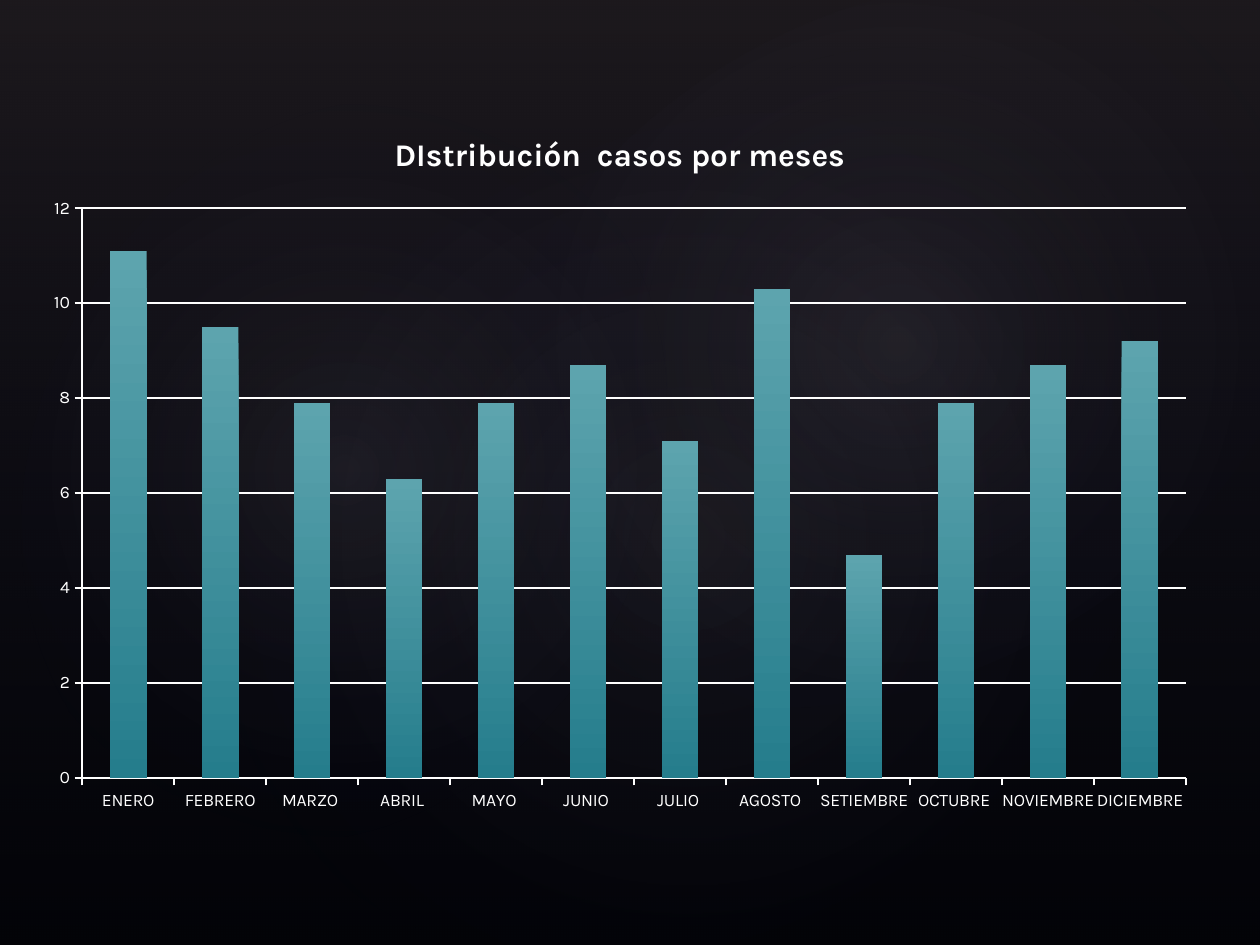
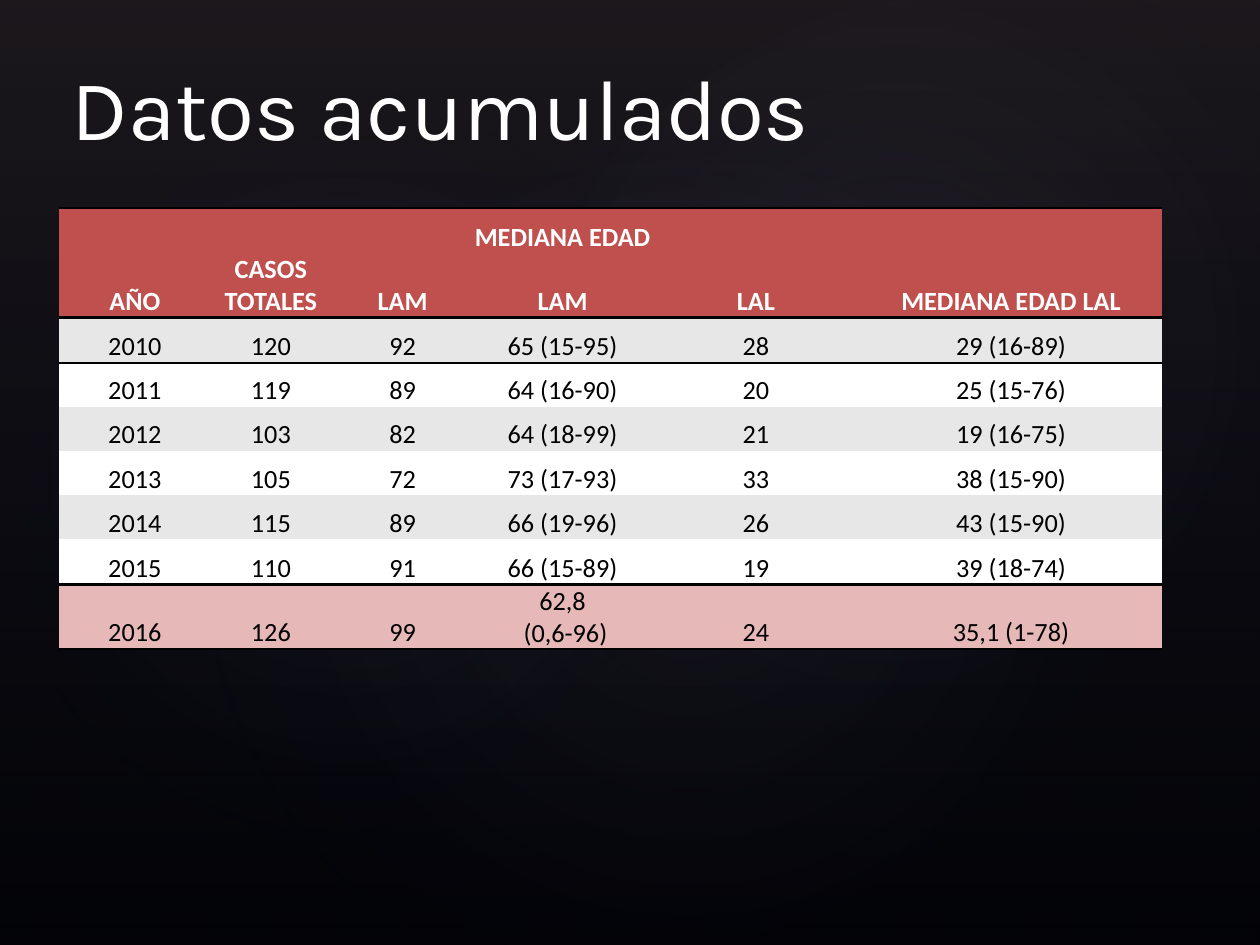
"""Build two dark slides: a column chart of cases by month and a table of yearly data."""
from lxml import etree
from pptx import Presentation
from pptx import util as u
from pptx.chart.data import CategoryChartData
from pptx.dml.color import RGBColor
from pptx.enum import chart as ch, shapes, text
from pptx.oxml import ns

COLORS = {"black": "000000", "white": "FFFFFF", "mauve": "504652", "navy": "242852",
          "glow": "C4BCC6", "bar_top": "5DA4AE", "bar_bottom": "257D8C",
          "header": "C0504D", "band": "E7E7E7", "last": "E6B8B7"}
RGB = {name: RGBColor.from_string(code) for name, code in COLORS.items()}
FONT = "Karla"

prs = Presentation()
prs.slide_width, prs.slide_height = u.Inches(10), u.Inches(7.5)


def box(left, top, width, height):
    """Turn percentages of the slide into lengths."""
    w, h = prs.slide_width / 100, prs.slide_height / 100
    return [round(v) for v in (left * w, top * h, width * w, height * h)]


def gradient(fill, parent, stops, circle=False):
    """Fill with stops of (position, colour, opacity), downwards or from the centre."""
    fill.background()
    gs = "".join(f'<a:gs pos="{pos * 1000}"><a:srgbClr val="{COLORS[name]}">'
                 f'<a:alpha val="{alpha * 1000}"/></a:srgbClr></a:gs>' for pos, name, alpha in stops)
    way = ('<a:path path="circle"><a:fillToRect l="50000" t="50000" r="50000" b="50000"/></a:path>'
           if circle else '<a:lin ang="5400000" scaled="0"/>')
    xml = (f'<a:gradFill {ns.nsdecls("a")} rotWithShape="1"><a:gsLst>{gs}</a:gsLst>{way}</a:gradFill>')
    parent.replace(parent.find(ns.qn("a:noFill")), etree.fromstring(xml))


RECT, OVAL = shapes.MSO_SHAPE.RECTANGLE, shapes.MSO_SHAPE.OVAL
veil = [(0, "mauve", 36), (100, "navy", 10)]
backdrop = [(RECT, (0, 0, 100, 100), 0, veil)]
for place, angle, alpha in [((15, 15.2, 79.2, 83.2), 328.7, 7),
                            ((-3, 17.07, 60.6, 65.33), 294.3, 8),
                            ((35.8, 1.73, 70.9, 69.33), 328.7, 8)]:
    backdrop.append((OVAL, place, angle, [(0, "glow", alpha), (58, "navy", 0)]))

slides = [prs.slides.add_slide(prs.slide_layouts[6]) for _ in range(2)]
for s in slides:
    s.background.fill.solid()
    s.background.fill.fore_color.rgb = RGB["black"]
    for kind, place, angle, stops in backdrop:
        sp = s.shapes.add_shape(kind, *box(*place))
        sp.rotation = angle
        sp.shadow.inherit = False
        sp.line.fill.background()
        gradient(sp.fill, sp._element.spPr, stops, kind == OVAL)
chart_slide, table_slide = slides

title = "DIstribución  casos por meses"
data = CategoryChartData()
data.categories = ["ENERO", "FEBRERO", "MARZO ", "ABRIL ", "MAYO ", "JUNIO ", "JULIO ", "AGOSTO ",
                   "SETIEMBRE", "OCTUBRE ", "NOVIEMBRE", "DICIEMBRE"]
data.add_series(title, [11.1, 9.5, 7.9, 6.3, 7.9, 8.7, 7.1, 10.3, 4.7, 7.9, 8.7, 9.2])
chart = chart_slide.shapes.add_chart(ch.XL_CHART_TYPE.COLUMN_CLUSTERED,
                                     *box(2.4, 11.33, 93.6, 75.87), data).chart
chart.font.name, chart.font.size = FONT, u.Pt(10)
chart.font.color.rgb = RGB["white"]
chart.has_legend = False
chart.has_title = True
tf = chart.chart_title.text_frame
tf.text = title
chart.chart_title.include_in_layout = False
f = tf.paragraphs[0].runs[0].font
f.name, f.size, f.bold = FONT, u.Pt(18), True
f.color.rgb = RGB["white"]

plot = chart.plots[0]
plot.gap_width = 150
plot.vary_by_categories = False
ser = plot.series[0]
ser.invert_if_negative = False
gradient(ser.format.fill, ser._element.get_or_add_spPr(),
         [(0, "bar_top", 100), (100, "bar_bottom", 100)])

va, ca = chart.value_axis, chart.category_axis
va.minimum_scale, va.maximum_scale, va.major_unit = 0, 12, 2
va.has_major_gridlines = True
for axis in (va, ca):
    axis.major_tick_mark = ch.XL_TICK_MARK.OUTSIDE
for line in (va.format.line, ca.format.line, va.major_gridlines.format.line):
    line.color.rgb = RGB["white"]
    line.width = u.Pt(1)

area = chart._chartSpace.chart.plotArea
for old in area.findall(ns.qn("c:layout")):
    area.remove(old)
parts = "".join(f'<c:{tag} val="{val}"/>' for tag, val in [
    ("layoutTarget", "inner"), ("xMode", "edge"), ("yMode", "edge"),
    ("x", 4.4 / 100), ("y", 14.1 / 100), ("w", 93.6 / 100), ("h", 79.5 / 100)])
area.insert(0, etree.fromstring(
    f'<c:layout {ns.nsdecls("c")}><c:manualLayout>{parts}</c:manualLayout></c:layout>'))

tf = table_slide.shapes.add_textbox(*box(4.7, 4, 82.5, 13.33)).text_frame
tf.word_wrap = True
tf.vertical_anchor = text.MSO_ANCHOR.BOTTOM
tf.text = "Datos acumulados"
f = tf.paragraphs[0].runs[0].font
f.name, f.size = FONT, u.Pt(49)
f.color.rgb = RGB["white"]

rows = [
    ["AÑO", "CASOS TOTALES", "LAM", "MEDIANA EDAD", "LAL", "MEDIANA EDAD LAL"],
    ["", "", "", "LAM", "", ""],
    ["2010", "120", "92", "65 (15-95)", "28", "29 (16-89)"],
    ["2011", "119", "89", "64 (16-90)", "20", "25 (15-76)"],
    ["2012", "103", "82", "64 (18-99)", "21", "19 (16-75)"],
    ["2013", "105", "72", "73 (17-93)", "33", "38 (15-90)"],
    ["2014", "115", "89", "66 (19-96)", "26", "43 (15-90)"],
    ["2015", "110", "91", "66 (15-89)", "19", "39 (18-74)"],
    ["2016", "126", "99", "62,8\n (0,6-96)", "24", "35,1 (1-78)"],
]
fills = ["header"] * 2 + ["band", "white"] * 3 + ["last"]
split_col = 3
table = table_slide.shapes.add_table(len(rows), len(rows[0]), *box(4.7, 22, 87.5, 46.27)).table
table.first_row = table.horz_banding = False
table._tbl.tblPr.find(ns.qn("a:tableStyleId")).text = "{2D5ABB26-0587-4C30-8999-92F81FD0307C}"
for col, share in zip(table.columns, [12, 9.6, 11.3, 14.1, 16.6, 23.9]):
    col.width = box(0, 0, share, 0)[2]
for row, share in zip(table.rows, [4.8] * 3 + [4.67] * 4 + [4.8, 4.93]):
    row.height = box(0, 0, 0, share)[3]
for j in range(len(rows[0])):
    if j != split_col:
        table.cell(0, j).merge(table.cell(1, j))

for i, row in enumerate(rows):
    for j, value in enumerate(row):
        c = table.cell(i, j)
        c.fill.solid()
        c.fill.fore_color.rgb = RGB[fills[i]]
        c.vertical_anchor = text.MSO_ANCHOR.BOTTOM
        c.margin_top = u.Inches(0.01)
        c.margin_left = c.margin_right = c.margin_bottom = 0
        edges = ["lnT"] if i in (0, 2, 8) else []
        if i in (1, 7, 8):
            edges.append("lnB")
        for n, edge in enumerate(edges):
            c._tc.get_or_add_tcPr().insert(n, etree.fromstring(
                f'<a:{edge} {ns.nsdecls("a")} w="{u.Pt(1.5)}"><a:solidFill>'
                f'<a:srgbClr val="{COLORS["black"]}"/></a:solidFill></a:{edge}>'))
        if c.is_spanned:
            continue
        c.text_frame.text = value
        for p in c.text_frame.paragraphs:
            p.alignment = text.PP_ALIGN.CENTER
            for r in p.runs:
                r.font.name, r.font.size, r.font.bold = "Calibri", u.Pt(15), i < 2
                r.font.color.rgb = RGB["white" if i < 2 else "black"]

prs.save("out.pptx")
